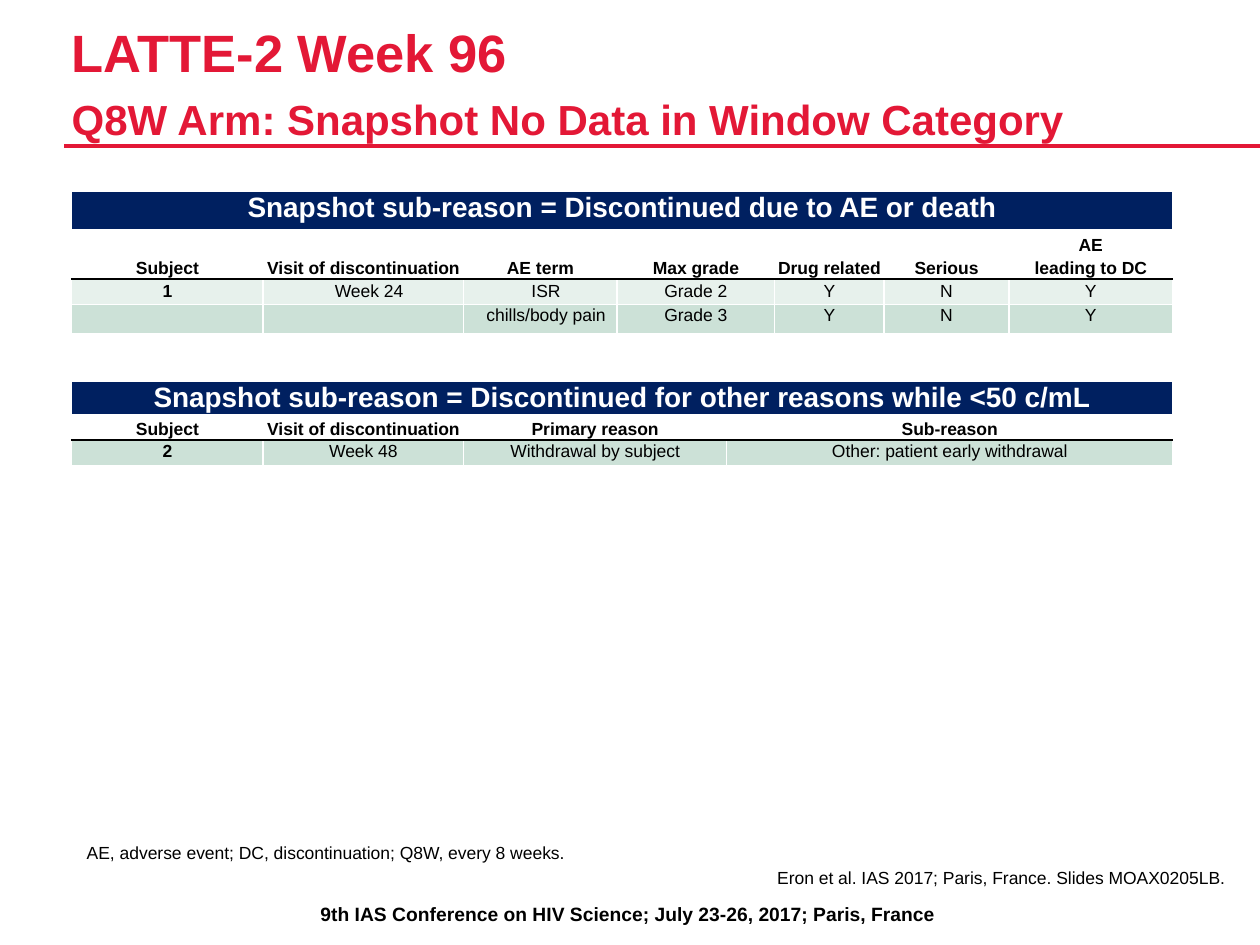
from lxml import etree
from pptx import Presentation
from pptx import util as u
from pptx.dml.color import RGBColor
from pptx.enum import shapes, text
from pptx.oxml import ns

Pt = u.Pt
RED = RGBColor(0xE3, 0x18, 0x36)
NAVY = RGBColor(0x00, 0x20, 0x60)
WHITE = RGBColor(0xFF, 0xFF, 0xFF)
BLACK = RGBColor(0, 0, 0)
PALE = RGBColor(0xE7, 0xF1, 0xEC)
MINT = RGBColor(0xCC, 0xE1, 0xD7)
FONT = "Arial"
LEFT, CENTER, RIGHT = text.PP_ALIGN.LEFT, text.PP_ALIGN.CENTER, text.PP_ALIGN.RIGHT
TOP, MIDDLE, BOTTOM = text.MSO_ANCHOR.TOP, text.MSO_ANCHOR.MIDDLE, text.MSO_ANCHOR.BOTTOM

COLS = [109.4, 114.5, 87.8, 62.6, 27.4, 62.6, 71.3, 93.6]
AE_SPANS = [1, 1, 1, 2, 1, 1, 1]
REASON_SPANS = [1, 1, 2, 4]
BANNER = dict(fill=NAVY, color=WHITE, size=16, bold=True)
HEADER = dict(bold=True, anchor=BOTTOM, spacing=1.15, bottom=(BLACK, 1))
ROWS = [
    (23, [8], ["Snapshot sub-reason = Discontinued due to AE or death"],
     dict(BANNER, bottom=(WHITE, 3))),
    (26.6, AE_SPANS, ["Subject", "Visit of discontinuation", "AE term", "Max grade",
                      "Drug related", "Serious", "AE\nleading to DC"],
     dict(HEADER, top=(WHITE, 3))),
    (14.4, AE_SPANS, ["1", "Week 24", "ISR", "Grade 2", "Y", "N", "Y"],
     dict(fill=PALE, anchor=MIDDLE, top=(BLACK, 1))),
    (16.6, AE_SPANS, ["", "", "chills/body pain", "Grade 3", "Y", "N", "Y"],
     dict(fill=MINT)),
    (27.4, [8], [""], {}),
    (18.7, [8], ["Snapshot sub-reason = Discontinued for other reasons while <50 c/mL"],
     BANNER),
    (14.4, REASON_SPANS, ["Subject", "Visit of discontinuation", "Primary reason",
                          "Sub-reason"], HEADER),
    (14.4, REASON_SPANS, ["2", "Week 48", "Withdrawal by subject",
                          "Other: patient early withdrawal"],
     dict(fill=MINT, top=(BLACK, 1))),
    (26.6, [8], [""], {}),
]


def write(p, content, size=10, color=BLACK, bold=False, align=LEFT, spacing=None):
    p.alignment = align
    if spacing:
        p.line_spacing = spacing
    r = p.add_run()
    r.text = content
    r.font.name, r.font.size, r.font.bold = FONT, Pt(size), bold
    r.font.color.rgb = color


def set_frame(tf, inset_x, inset_y, anchor):
    tf.word_wrap = True
    tf.auto_size = text.MSO_AUTO_SIZE.NONE
    tf.margin_left = tf.margin_right = Pt(inset_x)
    tf.margin_top = tf.margin_bottom = Pt(inset_y)
    tf.vertical_anchor = anchor


def add_title(s, lines, left, top, width, height):
    sp = s.shapes.title
    sp.left, sp.top, sp.width, sp.height = map(Pt, (left, top, width, height))
    set_frame(sp.text_frame, 0, 0, TOP)
    p = sp.text_frame.paragraphs[0]
    for i, (content, size) in enumerate(lines):
        if i:
            p.add_line_break()
        write(p, content, size=size, color=RED, bold=True, spacing=Pt(35))


def add_text(s, content, left, top, width, height, inset_x=0, inset_y=0,
             anchor=TOP, **fmt):
    sp = s.shapes.add_textbox(*map(Pt, (left, top, width, height)))
    set_frame(sp.text_frame, inset_x, inset_y, anchor)
    write(sp.text_frame.paragraphs[0], content, **fmt)


def add_rule(s, x1, y, x2):
    sp = s.shapes.add_connector(shapes.MSO_CONNECTOR.STRAIGHT, *map(Pt, (x1, y, x2, y)))
    sp.line.color.rgb, sp.line.width = RED, Pt(2)
    etree.SubElement(sp._element.spPr, ns.qn("a:effectLst"))


def set_borders(cell, top, bottom):
    tc_pr = cell._tc.get_or_add_tcPr()
    sides = {"lnL": (WHITE, 1), "lnR": (WHITE, 1), "lnT": top, "lnB": bottom}
    for i, (side, (color, width)) in enumerate(sides.items()):
        ln = etree.Element(ns.qn("a:" + side), w=str(Pt(width)))
        fill = etree.SubElement(ln, ns.qn("a:solidFill"))
        etree.SubElement(fill, ns.qn("a:srgbClr"), val=str(color))
        tc_pr.insert(i, ln)


def fill_cell(cell, content, anchor=TOP, **fmt):
    cell.margin_left = cell.margin_right = Pt(0.72)
    cell.margin_top = cell.margin_bottom = Pt(0.72)
    cell.vertical_anchor = anchor
    tf = cell.text_frame
    if not content:
        etree.SubElement(tf.paragraphs[0]._p, ns.qn("a:endParaRPr"), sz="1000")
        return
    for i, line in enumerate(content.split("\n")):
        p = tf.add_paragraph() if i else tf.paragraphs[0]
        write(p, line, align=CENTER, **fmt)


def add_row(table, row, spans, texts, fill=WHITE, top=(WHITE, 1), bottom=(WHITE, 1),
            bold=False, **fmt):
    for cell in table.rows[row].cells:
        cell.fill.solid()
        cell.fill.fore_color.rgb = fill
        set_borders(cell, top, bottom)
    col = 0
    for span, content in zip(spans, texts):
        cell = table.cell(row, col)
        if span > 1:
            cell.merge(table.cell(row, col + span - 1))
        fill_cell(cell, content, bold=bold or col == 0, **fmt)
        if content in ("Week 24", "ISR", "chills/body pain"):
            cell.margin_left = Pt(7.2)
        col += span


def add_table(s, left, top):
    height = sum(row[0] for row in ROWS)
    frame = s.shapes.add_table(len(ROWS), len(COLS),
                               *map(Pt, (left, top, sum(COLS), height)))
    table = frame.table
    table.first_row = table.horz_banding = False
    for col, width in zip(table.columns, COLS):
        col.width = Pt(width)
    for i, (row_height, spans, texts, fmt) in enumerate(ROWS):
        table.rows[i].height = Pt(row_height)
        add_row(table, i, spans, texts, **fmt)


def main():
    prs = Presentation()
    prs.slide_width, prs.slide_height = Pt(720), Pt(540)
    s = prs.slides.add_slide(prs.slide_layouts[5])
    add_text(s, "9th IAS Conference on HIV Science; July 23-26, 2017; Paris, France",
             4.3, 511.9, 709.2, 20.9, inset_x=7.2, inset_y=3.6,
             size=11, bold=True, align=CENTER)
    add_rule(s, 36.7, 83.5, 720)
    add_title(s, [("LATTE-2 Week 96", 30),
                  ("Q8W Arm: Snapshot No Data in Window Category", 24)],
              41, 12.2, 613.4, 66.2)
    add_table(s, 41, 109.4)
    add_text(s, "Eron et al. IAS 2017; Paris, France. Slides MOAX0205LB.",
             41.8, 495.4, 658.1, 14.4, align=RIGHT)
    add_text(s, "AE, adverse event; DC, discontinuation; Q8W, every 8 weeks.",
             42.5, 477.4, 658.1, 19.4, inset_x=7.2, inset_y=3.6, anchor=BOTTOM)
    prs.save("out.pptx")


if __name__ == "__main__":
    main()
